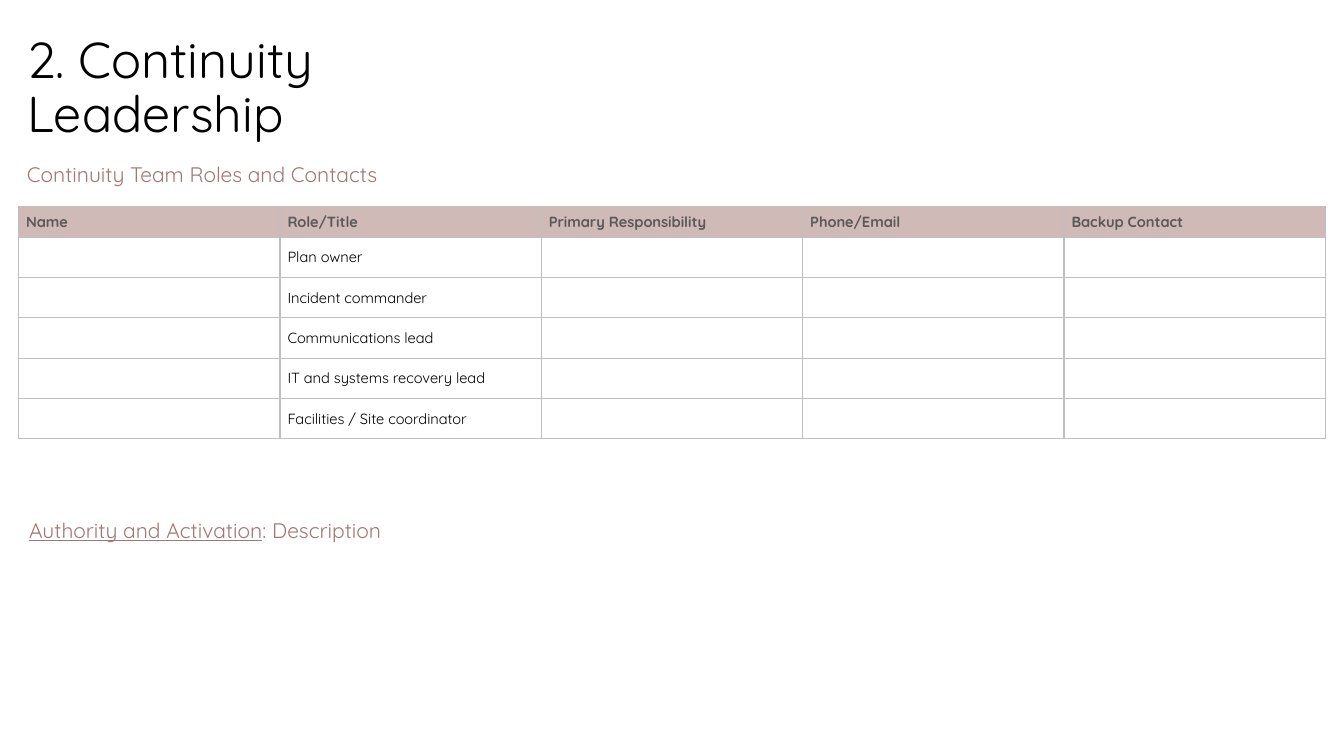
from pptx import Presentation
from pptx.dml.color import RGBColor
from pptx.enum.text import MSO_ANCHOR, MSO_AUTO_SIZE, PP_ALIGN
from pptx.oxml import parse_xml
from pptx.oxml.ns import nsdecls
from pptx.util import Pt

MIDDLE = MSO_ANCHOR.MIDDLE
LEFT = PP_ALIGN.LEFT
NO_FIT = MSO_AUTO_SIZE.NONE
GROW = MSO_AUTO_SIZE.SHAPE_TO_FIT_TEXT
TITLE_ONLY = 5

HEADINGS = ["Name", "Role/Title", "Primary Responsibility",
            "Phone/Email", "Backup Contact"]
ROLES = ["Plan owner", "Incident commander", "Communications lead",
         "IT and systems recovery lead", "Facilities / Site coordinator"]


def colour(value):
    return RGBColor.from_string(value)


class PlanPage:
    """Holds the style and the current slide."""
    font = "Quicksand"
    black = "000000"
    heading_grey = "595959"
    accent = "A17773"
    header_fill = "D0BAB8"
    border = "BFBFBF"

    def __init__(self, deck):
        self.page = deck.slides.add_slide(deck.slide_layouts[TITLE_ONLY])

    def format_span(self, span, size, ink, bold=False, underline=False):
        span.font.name = self.font
        span.font.size = Pt(size)
        span.font.color.rgb = colour(ink)
        span.font.bold = bold
        span.font.underline = underline

    def title(self, text, left, top, width, height):
        box = self.page.shapes.title
        box.left, box.top, box.width, box.height = map(Pt, (left, top, width, height))
        frame = box.text_frame
        frame.text = text
        frame.word_wrap = True
        frame.auto_size = NO_FIT
        frame.vertical_anchor = MIDDLE
        para = frame.paragraphs[0]
        para.alignment = LEFT
        para.line_spacing = 0.9
        para.space_after = Pt(6)
        self.format_span(para.runs[0], 36, self.black)

    def subheading(self, text, left, top, width, height, underlined=""):
        box = self.page.shapes.add_textbox(Pt(left), Pt(top), Pt(width), Pt(height))
        frame = box.text_frame
        frame.word_wrap = True
        frame.auto_size = GROW
        frame.vertical_anchor = MIDDLE
        for part in filter(None, (underlined, text)):
            span = frame.paragraphs[0].add_run()
            span.text = part
            self.format_span(span, 15, self.accent, underline=part == underlined)

    def outline_cell(self, cell):
        properties = cell._tc.get_or_add_tcPr()
        for position, side in enumerate(("lnL", "lnR", "lnT", "lnB")):
            properties.insert(position, parse_xml(
                f'<a:{side} {nsdecls("a")} w="{Pt(1)}"><a:solidFill>'
                f'<a:srgbClr val="{self.border}"/></a:solidFill></a:{side}>'))

    def table(self, rows, left, top, width, header_height, row_height):
        height = header_height + row_height * (len(rows) - 1)
        columns = len(rows[0])
        table = self.page.shapes.add_table(
            len(rows), columns, Pt(left), Pt(top), Pt(width), Pt(height)).table
        table.horz_banding = False
        for column in table.columns:
            column.width = Pt(width / columns)
        for index, values in enumerate(rows):
            header = index == 0
            table.rows[index].height = Pt(header_height if header else row_height)
            for cell, text in zip(table.rows[index].cells, values):
                self.fill_cell(cell, text, header)

    def fill_cell(self, cell, text, header):
        cell.margin_left = cell.margin_right = Pt(5.4)
        cell.margin_top = cell.margin_bottom = 0
        cell.vertical_anchor = MIDDLE
        if header:
            cell.fill.solid()
            cell.fill.fore_color.rgb = colour(self.header_fill)
        else:
            cell.fill.background()
        self.outline_cell(cell)
        if text:
            cell.text_frame.text = text
            para = cell.text_frame.paragraphs[0]
            para.space_after = Pt(8)
            ink = self.heading_grey if header else self.black
            self.format_span(para.runs[0], 10.5, ink, bold=header)


def main():
    deck = Presentation()
    deck.slide_width, deck.slide_height = Pt(960), Pt(540)
    plan = PlanPage(deck)

    # Title
    plan.title("2. Continuity Leadership", 12.2, 10.8, 259.2, 105.8)

    # Team roles
    rows = [HEADINGS] + [["", role, "", "", ""] for role in ROLES]
    plan.table(rows, 13.3, 147.6, 933.5, 21.8, 28.8)
    plan.subheading("Continuity Team Roles and Contacts", 12.2, 111.6, 923, 25.2)

    # Authority
    plan.subheading(": Description", 13.7, 365.8, 923, 25.2,
                    underlined="Authority and Activation")

    deck.save("out.pptx")


if __name__ == "__main__":
    main()
